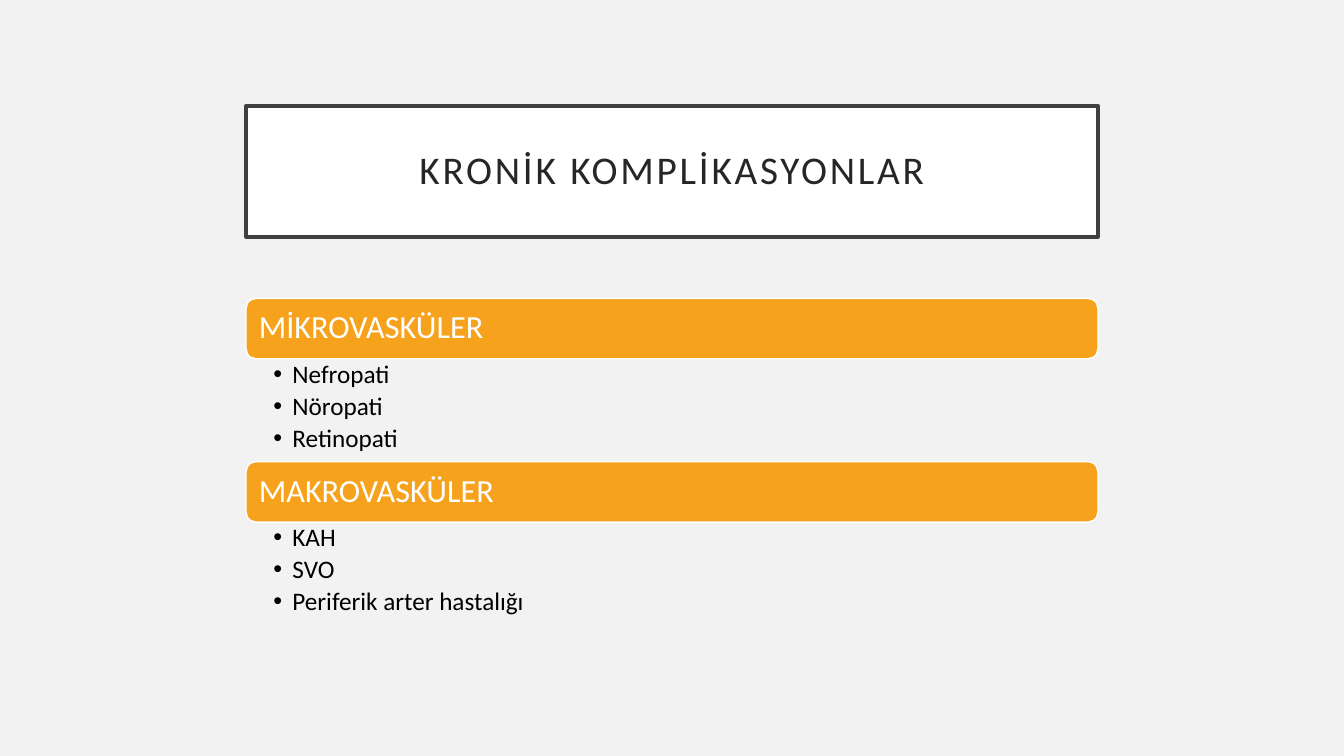
from lxml import etree
from pptx import Presentation
from pptx.dml.color import RGBColor
from pptx.enum.shapes import MSO_SHAPE
from pptx.enum.text import MSO_ANCHOR, MSO_AUTO_SIZE, PP_ALIGN
from pptx.oxml.ns import qn
from pptx.util import Inches, Pt

ROUND = MSO_SHAPE.ROUNDED_RECTANGLE
TOP, MIDDLE = MSO_ANCHOR.TOP, MSO_ANCHOR.MIDDLE
LEFT, CENTER = PP_ALIGN.LEFT, PP_ALIGN.CENTER
NO_FIT = MSO_AUTO_SIZE.NONE

FONT = "Calibri"
EDGE, WIDTH = 2.44, 8.45
FIRST, STEP = 2.96, 1.62
BAR, LIST = 0.6, 1.02

GROUPS = [
    ("MİKROVASKÜLER", ["Nefropati", "Nöropati", "Retinopati"]),
    ("MAKROVASKÜLER", ["KAH", "SVO", "Periferik arter hastalığı"]),
]


def color(code):
    return RGBColor.from_string(code)


def place(shape, top, height):
    """Put a shape in the slide's single column."""
    shape.left, shape.top = Inches(EDGE), Inches(top)
    shape.width, shape.height = Inches(WIDTH), Inches(height)


def paint(shape, fill, line, width):
    shape.fill.solid()
    shape.fill.fore_color.rgb = color(fill)
    shape.line.color.rgb = color(line)
    shape.line.width = Pt(width)


def frame(shape, anchor, left, top, right, bottom):
    """Set up the text frame with insets in inches."""
    text = shape.text_frame
    text.word_wrap = True
    text.auto_size = NO_FIT
    text.vertical_anchor = anchor
    text.margin_left, text.margin_top = Inches(left), Inches(top)
    text.margin_right, text.margin_bottom = Inches(right), Inches(bottom)
    return text


def write(para, words, size, ink, align=LEFT, after=0):
    para.alignment = align
    para.line_spacing = 0.9
    para.space_before = Pt(0)
    para.space_after = Pt(after)
    run = para.add_run()
    run.text = words
    run.font.name = FONT
    run.font.size = Pt(size)
    run.font.color.rgb = color(ink)
    return run


def bullet(para):
    props = para._p.get_or_add_pPr()
    props.set("marL", str(Inches(0.19)))
    props.set("indent", str(Inches(-0.19)))
    etree.SubElement(props, qn("a:buChar")).set("char", "•")


def add_title(slide, words):
    title = slide.shapes.title
    place(title, 1.05, 1.3)
    paint(title, "FFFFFF", "404040", 2.5)
    text = frame(title, MIDDLE, 0.2, 0.2, 0.2, 0.2)
    run = write(text.paragraphs[0], words, 28, "262626", CENTER)
    run._r.get_or_add_rPr().set("spc", "200")


def add_bar(slide, words, top):
    bar = slide.shapes.add_shape(ROUND, 0, 0, 0, 0)
    place(bar, top, BAR)
    bar.shadow.inherit = False
    paint(bar, "F6A21D", "FFFFFF", 1)
    text = frame(bar, MIDDLE, 0.1, 0.1, 0.1, 0.1)
    write(text.paragraphs[0], words, 23, "FFFFFF")


def fill_list(body, items, top):
    place(body, top, LIST)
    text = frame(body, TOP, 0.27, 0.03, 0.18, 0.03)
    for i, item in enumerate(items):
        para = text.add_paragraph() if i else text.paragraphs[0]
        para.level = 1
        write(para, item, 18, "000000", after=3.2)
        bullet(para)


def main():
    deck = Presentation()
    deck.slide_width, deck.slide_height = Inches(13.33), Inches(7.5)
    slide = deck.slides.add_slide(deck.slide_layouts.get_by_name("Two Content"))
    slide.background.fill.solid()
    slide.background.fill.fore_color.rgb = color("F2F2F2")

    add_title(slide, "KRONİK KOMPLİKASYONLAR")
    for i, (head, items) in enumerate(GROUPS):
        top = FIRST + i * STEP
        add_bar(slide, head, top)
        fill_list(slide.placeholders[i + 1], items, top + BAR)

    for extra in list(slide.placeholders):
        if not extra.text_frame.text:
            extra._element.getparent().remove(extra._element)
    deck.save("out.pptx")


if __name__ == "__main__":
    main()
